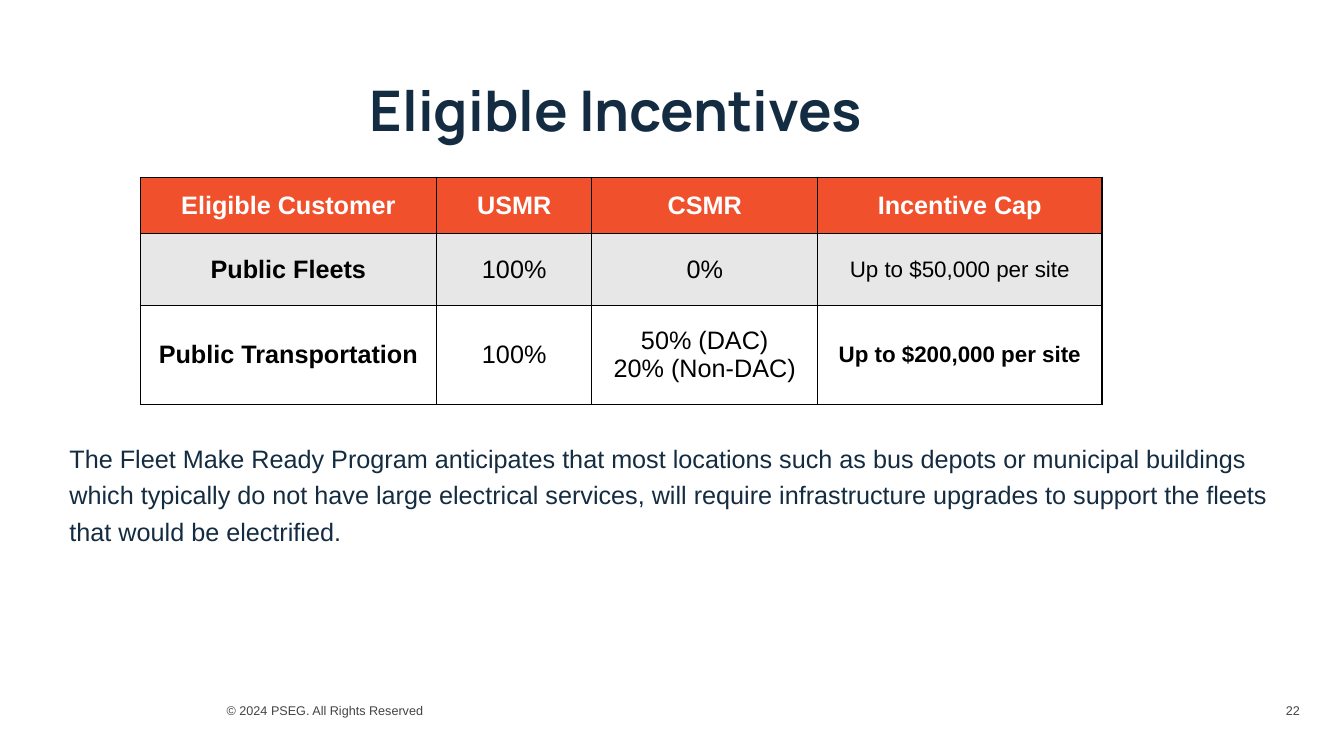
from lxml import etree
from pptx import Presentation
from pptx import util as u
from pptx.dml import color
from pptx.enum import text
from pptx.oxml import ns

ALIGN = {"l": text.PP_ALIGN.LEFT, "c": text.PP_ALIGN.CENTER, "r": text.PP_ALIGN.RIGHT}
MID = text.MSO_ANCHOR.MIDDLE
TOP = text.MSO_ANCHOR.TOP


def rgb(code):
    return color.RGBColor.from_string(code)


def write(frame, words, size=18, ink="000000", bold=False, font="Arial", align="l", lead=None):
    for i, line in enumerate(words.split("\n")):
        para = frame.paragraphs[0] if i == 0 else frame.add_paragraph()
        para.alignment = ALIGN[align]
        if lead:
            para.line_spacing = lead
        run = para.add_run()
        run.text = line
        run.font.name = font
        run.font.size = u.Pt(size)
        run.font.bold = bold
        run.font.color.rgb = rgb(ink)


class Deck:
    """Holds the colours and the current slide."""

    navy, gray, black, white = "142C41", "444444", "000000", "FFFFFF"
    head, band = "F0512C", "E7E7E7"

    def __init__(self):
        self.pres = Presentation()
        self.pres.slide_width = u.Inches(13.33)
        self.pres.slide_height = u.Inches(7.5)
        self.slide = self.pres.slides.add_slide(self.pres.slide_layouts[6])

    def label(self, box, words, anchor=TOP, left=0.1, **style):
        frame = self.slide.shapes.add_textbox(*map(u.Inches, box)).text_frame
        frame.word_wrap = True
        frame.vertical_anchor = anchor
        frame.margin_left = u.Inches(left)
        write(frame, words, **style)

    def border(self, cell):
        props = cell._tc.get_or_add_tcPr()
        for i, side in enumerate(("lnL", "lnR", "lnT", "lnB")):
            line = etree.Element(ns.qn("a:" + side), w=str(u.Pt(1)))
            fill = etree.SubElement(line, ns.qn("a:solidFill"))
            etree.SubElement(fill, ns.qn("a:srgbClr"), val=self.black)
            props.insert(i, line)

    def cell(self, cell, words, fill, **style):
        cell.fill.solid()
        cell.fill.fore_color.rgb = rgb(fill)
        cell.vertical_anchor = MID
        write(cell.text_frame, words, align="c", **style)
        self.border(cell)

    def table(self, left, top, wide, high, rows):
        box = map(u.Inches, (left, top, sum(wide), sum(high)))
        grid = self.slide.shapes.add_table(len(high), len(wide), *box).table
        for col, width in zip(grid.columns, wide):
            col.width = u.Inches(width)
        for row, height in zip(grid.rows, high):
            row.height = u.Inches(height)
        fills = (self.head, self.band, self.white)
        for r, row in enumerate(rows):
            for c, words in enumerate(row):
                last = c == len(wide) - 1
                self.cell(
                    grid.cell(r, c), words, fills[r],
                    size=16 if r and last else 18,
                    ink=self.black if r else self.white,
                    bold=r == 0 or c == 0 or (r == 2 and last),
                )


def main():
    deck = Deck()
    small = dict(anchor=MID, size=9, ink=deck.gray)
    deck.label((2.15, 6.85, 4.72, 0.4), "© 2024 PSEG. All Rights Reserved", **small)
    deck.label((11.18, 6.85, 1.81, 0.4), "22", align="r", **small)
    deck.label((3.44, 0.78, 5.44, 0.71), "Eligible Incentives", left=0, size=40,
               ink=deck.navy, bold=True, font="Manrope", align="c", lead=0.9)
    deck.label(
        (0.59, 4.29, 12.52, 1.19),
        "The Fleet Make Ready Program anticipates that most locations such as bus depots "
        "or municipal buildings which typically do not have large electrical services, "
        "will require infrastructure upgrades to support the fleets that would be electrified.",
        ink=deck.navy, lead=1.2,
    )
    deck.table(1.39, 1.76, (2.94, 1.54, 2.24, 2.82), (0.56, 0.71, 0.98), (
        ("Eligible Customer", "USMR", "CSMR", "Incentive Cap"),
        ("Public Fleets", "100%", "0%", "Up to $50,000 per site"),
        ("Public Transportation", "100%", "50% (DAC)\n20% (Non-DAC)", "Up to $200,000 per site"),
    ))
    deck.pres.save("out.pptx")


if __name__ == "__main__":
    main()
